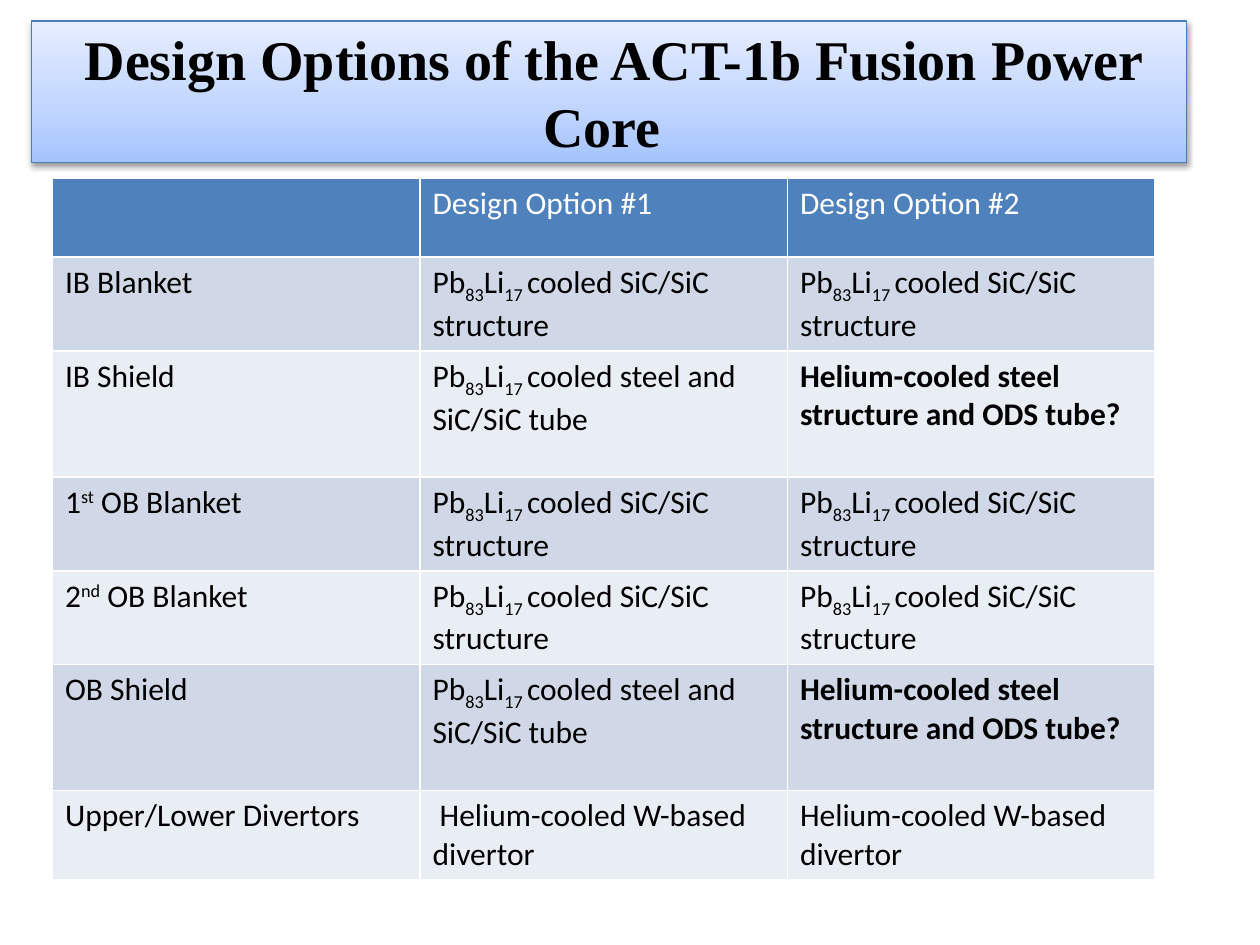
from lxml.etree import SubElement as Sub
from pptx import Presentation as Deck
from pptx.dml.color import RGBColor as Rgb
from pptx.enum.shapes import MSO_SHAPE as Shape
from pptx.enum.text import MSO_ANCHOR as Anchor, PP_ALIGN as Align
from pptx.oxml.ns import qn
from pptx.util import Inches, Pt

HUES = {"ink": "000000", "white": "FFFFFF", "edge": "4B7EBC", "head": "4F81BD",
        "odd": "D0D8E8", "even": "E9EDF4",
        "low": "A4C4FF", "mid": "BFD4FF", "top": "E6EEFF"}
UNIT = Inches(10) // 120
TITLE_BOX = (3, 2, 110, 13.5)
TABLE_BOX = (5, 17, 105, 65.1)
ROW_UNITS = (7.5, 8.4, 12, 8.4, 8.4, 12, 8.4)

LEAD = "Pb|83|Li|17 |cooled "
BLANKET = LEAD + "SiC/SiC structure"
SHIELD = LEAD + "steel and SiC/SiC tube"
ODS = "Helium-cooled steel structure and ODS tube?"
DIVERTOR = "Helium-cooled W-based divertor"
ROWS = (
    ("", "Design Option #1", "Design Option #2"),
    ("IB Blanket", BLANKET, BLANKET),
    ("IB Shield", SHIELD, ODS),
    ("1|st| OB Blanket", BLANKET, BLANKET),
    ("2|nd| OB Blanket", BLANKET, BLANKET),
    ("OB Shield", SHIELD, ODS),
    ("Upper/Lower Divertors", " " + DIVERTOR, DIVERTOR),
)


def scale(box):
    """Turn grid units into slide lengths."""
    return [int(n * UNIT) for n in box]


def style(run, font, size, hue, bold):
    """Format one run."""
    run.font.name, run.font.size, run.font.bold = font, Pt(size), bold
    run.font.color.rgb = Rgb.from_string(HUES[hue])


def tint(node, hue):
    """Add a colour element under node and return it."""
    return Sub(node, qn("a:srgbClr"), val=HUES[hue])


def shade(shape):
    """Give the shape its three-stop gradient and soft shadow."""
    shape.fill.gradient()
    shape.fill.gradient_angle = 90
    props = shape.element.spPr
    stops = props.find(".//" + qn("a:gsLst"))
    stops.clear()
    for share, hue in ((0, "low"), (35, "mid"), (100, "top")):
        tint(Sub(stops, qn("a:gs"), pos=str(share * 1000)), hue)
    shape.shadow.inherit = False
    glow = Sub(props.find(qn("a:effectLst")), qn("a:outerShdw"),
               blurRad=str(Pt(3.1)), dist=str(Pt(1.6)), dir="5400000", rotWithShape="0")
    Sub(tint(glow, "ink"), qn("a:alpha"), val="38000")


def banner(slide, box):
    """Draw the title bar in the box."""
    bar = slide.shapes.add_shape(Shape.RECTANGLE, *scale(box))
    shade(bar)
    bar.line.color.rgb = Rgb.from_string(HUES["edge"])
    bar.line.width = Pt(0.75)
    frame = bar.text_frame
    frame.word_wrap, frame.vertical_anchor = True, Anchor.MIDDLE
    para = frame.paragraphs[0]
    para.alignment = Align.CENTER
    for text, size in ((" ", 24), ("Design Options of the ACT-1b Fusion Power Core ", 32)):
        run = para.add_run()
        run.text = text
        style(run, "Times New Roman", size, "ink", True)


def fill(cell, text, hue, ink, shift):
    """Fill a cell, shifting every second part off the baseline."""
    cell.fill.solid()
    cell.fill.fore_color.rgb = Rgb.from_string(HUES[hue])
    for i, part in enumerate(text.split("|")):
        run = cell.text_frame.paragraphs[0].add_run()
        run.text = part
        style(run, "Calibri", 18, ink, text == ODS)
        if i % 2:
            run.font._element.set("baseline", str(shift * 1000))


def options(slide, box):
    """Draw the table of design options in the box."""
    grid = slide.shapes.add_table(len(ROWS), len(ROWS[0]), *scale(box)).table
    for r, row in enumerate(ROWS):
        grid.rows[r].height = int(ROW_UNITS[r] * UNIT)
        hue = "head" if r == 0 else "odd" if r % 2 else "even"
        for c, text in enumerate(row):
            fill(grid.cell(r, c), text, hue, "ink" if r else "white", -25 if c else 30)


def main():
    """Build and save the slide."""
    deck = Deck()
    deck.slide_width, deck.slide_height = Inches(10), Inches(7.5)
    slide = deck.slides.add_slide(deck.slide_layouts[6])
    banner(slide, TITLE_BOX)
    options(slide, TABLE_BOX)
    deck.save("out.pptx")


if __name__ == "__main__":
    main()
